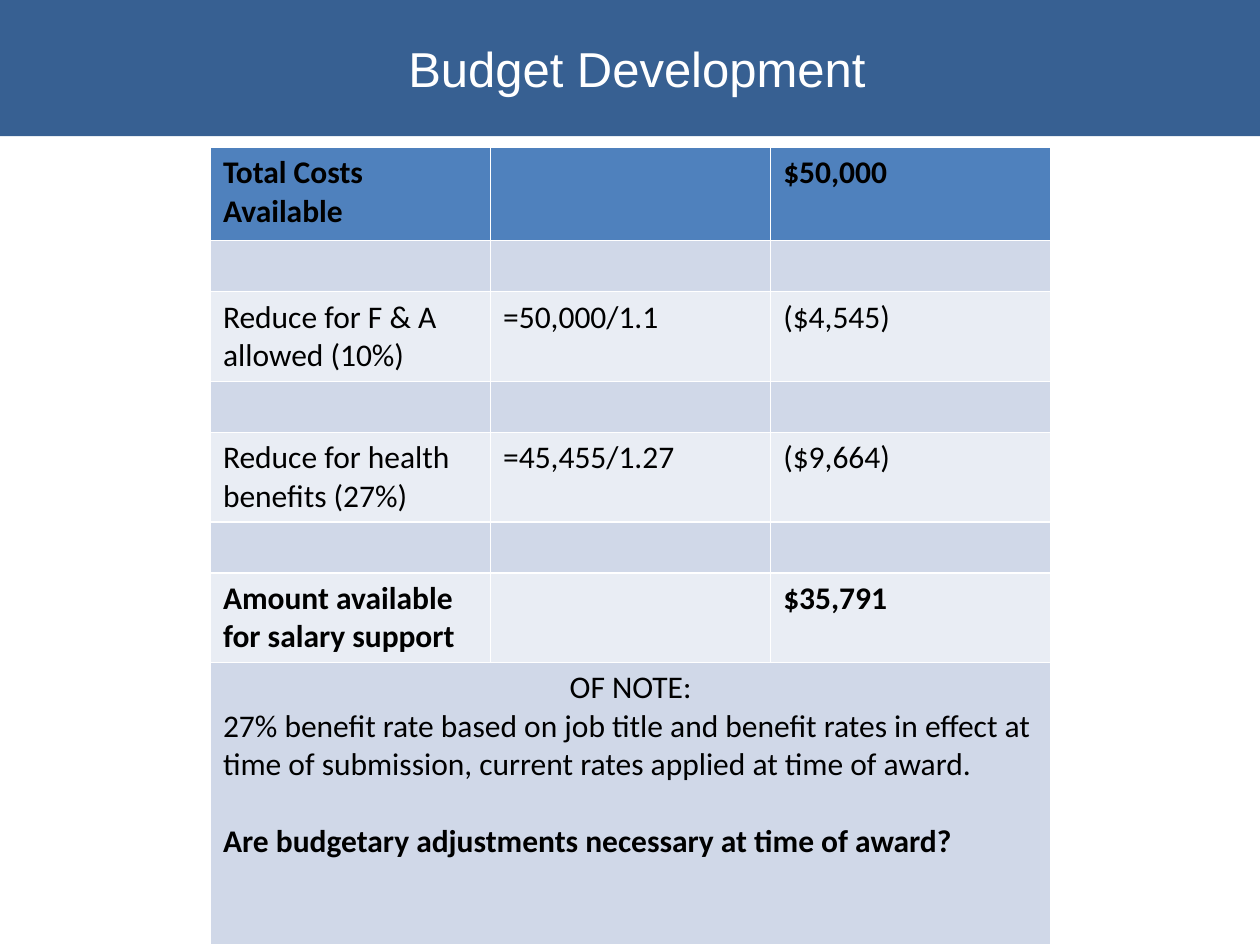
from pptx import Presentation
from pptx.dml.color import RGBColor
from pptx.enum.text import MSO_ANCHOR, PP_ALIGN
from pptx.util import Inches, Pt

CENTER = PP_ALIGN.CENTER
MIDDLE = MSO_ANCHOR.MIDDLE

NAVY = RGBColor(0x37, 0x60, 0x92)
BLUE = RGBColor(0x4F, 0x81, 0xBD)
BAND_DARK = RGBColor(0xD0, 0xD8, 0xE8)
BAND_LIGHT = RGBColor(0xE9, 0xED, 0xF4)
WHITE = RGBColor(0xFF, 0xFF, 0xFF)
BLACK = RGBColor(0x00, 0x00, 0x00)

EMPTY = ("", "", "")
BUDGET = [
    ("Total Costs Available", "", "$50,000"),
    EMPTY,
    ("Reduce for F & A allowed (10%)", "=50,000/1.1", "($4,545)"),
    EMPTY,
    ("Reduce for health benefits (27%)", "=45,455/1.27", "($9,664)"),
    EMPTY,
    ("Amount available for salary support", "", "$35,791"),
    EMPTY,
]
HEIGHTS = [0.74, 0.4, 0.71, 0.4, 0.71, 0.4, 0.71, 2.24]
BOLD_ROWS = (0, 6)
NOTE_ROW = 7
NOTES = [
    "OF NOTE:",
    "27% benefit rate based on job title and benefit rates in effect at "
    "time of submission, current rates applied at time of award.",
    "Are budgetary adjustments necessary at time of award?",
]


def write(p, text, bold):
    p.font.size = Pt(18)
    if not text:
        return
    r = p.add_run()
    r.text = text
    r.font.name = "Calibri"
    r.font.size = Pt(18)
    r.font.bold = bold
    r.font.color.rgb = BLACK


prs = Presentation()
prs.slide_width, prs.slide_height = Inches(10), Inches(7.5)
s = prs.slides.add_slide(prs.slide_layouts[5])

title = s.shapes.title
title.left, title.top = Inches(0), Inches(0)
title.width, title.height = Inches(10), Inches(1.08)
title.fill.solid()
title.fill.fore_color.rgb = NAVY
tf = title.text_frame
tf.text = " Budget Development"
tf.vertical_anchor = MIDDLE
p = tf.paragraphs[0]
p.alignment = CENTER
p.font.name = "Arial"
p.font.size = Pt(28)
p.font.color.rgb = WHITE

table = s.shapes.add_table(
    len(BUDGET), 3, Inches(1.67), Inches(1.17), Inches(6.67), Inches(sum(HEIGHTS))
).table
for i, (values, height) in enumerate(zip(BUDGET, HEIGHTS)):
    table.rows[i].height = Inches(height)
    for j, value in enumerate(values):
        cell = table.cell(i, j)
        cell.fill.solid()
        cell.fill.fore_color.rgb = BLUE if i == 0 else BAND_DARK if i % 2 else BAND_LIGHT
        write(cell.text_frame.paragraphs[0], value, i in BOLD_ROWS)

note = table.cell(NOTE_ROW, 0)
note.merge(table.cell(NOTE_ROW, 2))
tf = note.text_frame
heading, rates, question = tf.paragraphs[0], tf.add_paragraph(), tf.add_paragraph()
for p, text in zip((heading, rates, question), NOTES):
    write(p, text, p is question)
heading.alignment = CENTER
question.space_before = Pt(22)

prs.save("out.pptx")
